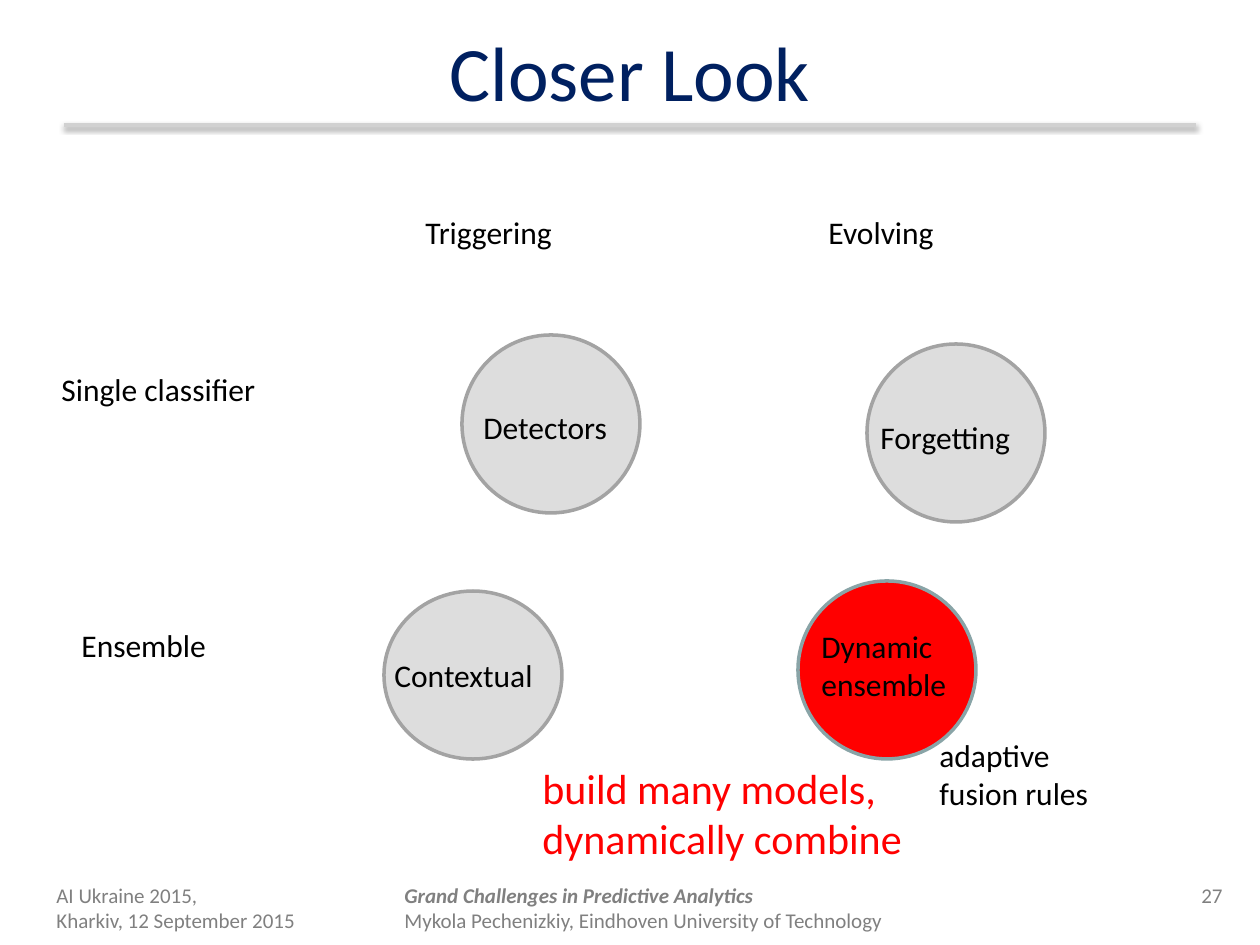
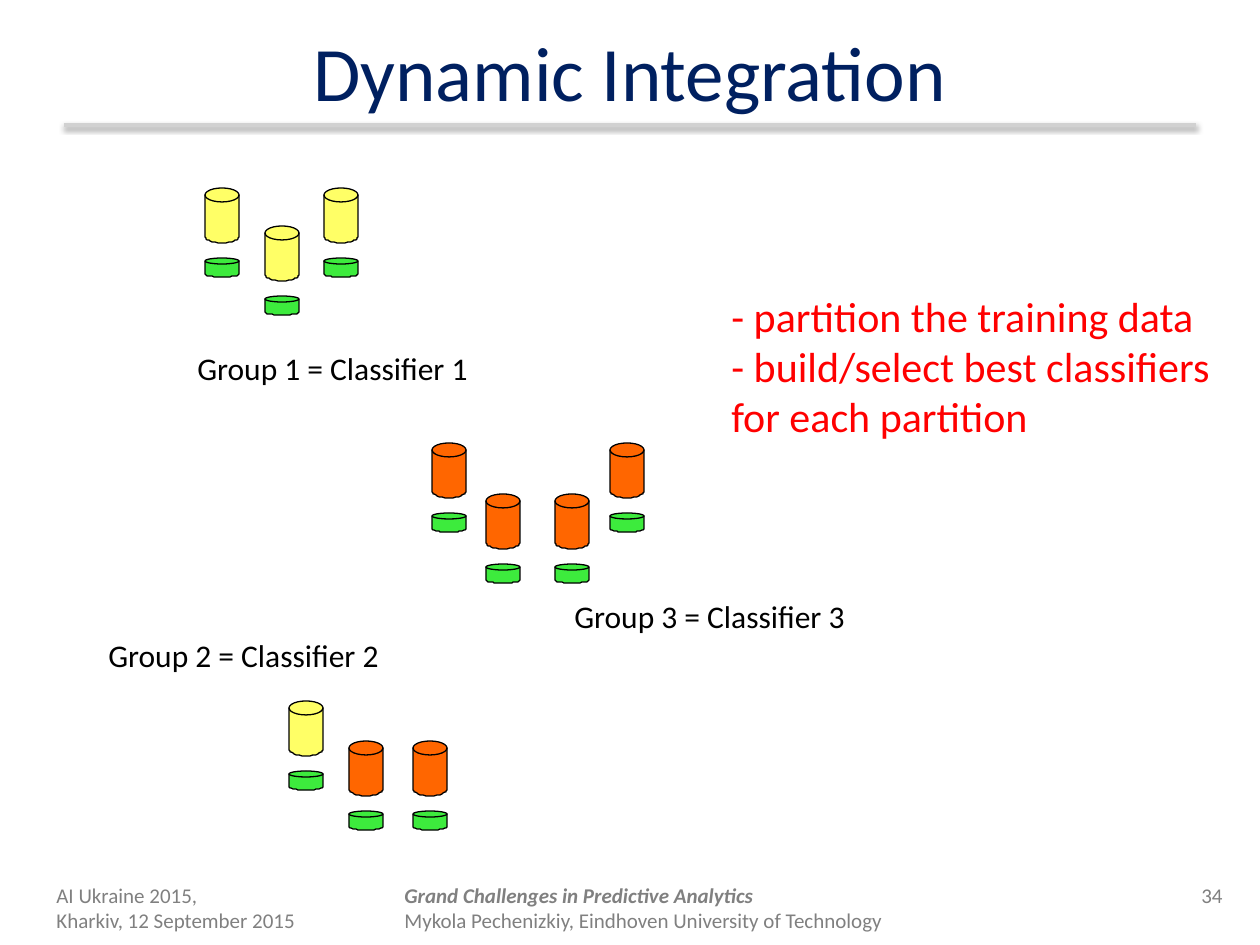
from dataclasses import dataclass
from math import cos, pi, sin

from lxml import etree
from pptx import Presentation
from pptx import util as u
from pptx.dml.color import RGBColor
from pptx.enum import shapes, text
from pptx.oxml import ns

SCALE = u.Inches(1) / 126


@dataclass(frozen=True)
class Theme:
    font: str = "Calibri"
    navy: str = "002060"
    black: str = "000000"
    red: str = "FF0000"
    foot: str = "808080"
    rule: str = "D1D1D1"
    pale: str = "DDDDDD"
    edge: str = "A3A3A3"
    teal: str = "89A4A7"
    yellow: str = "FFFF66"
    orange: str = "FF6600"
    green: str = "3DEB3D"
    head: int = 44
    large: int = 24
    body: int = 18
    small: int = 12


T = Theme()
LEFT, RIGHT = text.PP_ALIGN.LEFT, text.PP_ALIGN.RIGHT
CENTER = text.PP_ALIGN.CENTER
CAN_W, CAN_H, CAN_LID = 34, 55, 14
BASE_H, BASE_LID, BASE_DROP = 19, 6, 70


def px(n):
    return u.Emu(round(n * SCALE))


def rgb(code):
    return RGBColor.from_string(code)


# Text
def add_run(para, words, size, color, strong=False):
    run = para.add_run()
    run.text = words
    font = run.font
    font.name, font.size = T.font, u.Pt(size)
    font.color.rgb = rgb(color)
    font.bold = font.italic = strong


def add_text(slide, box, lines, size=T.body, color=T.black, align=LEFT):
    frame = slide.shapes.add_textbox(*map(px, box)).text_frame
    frame.word_wrap = True
    for i, line in enumerate(lines):
        para = frame.paragraphs[0] if i == 0 else frame.add_paragraph()
        para.alignment = align
        add_run(para, line, size, color)
    return frame


# Shapes
def paint(shape, fill, edge, width):
    shape.shadow.inherit = False
    shape.fill.solid()
    shape.fill.fore_color.rgb = rgb(fill)
    shape.line.color.rgb = rgb(edge)
    shape.line.width = u.Pt(width)


def add_oval(slide, box, fill, edge, width=2):
    oval = slide.shapes.add_shape(shapes.MSO_SHAPE.OVAL, *map(px, box))
    paint(oval, fill, edge, width)


def add_drum(slide, x, y, high, lid, fill):
    """Draw a body with a round foot, then its lid."""
    rx, ry = CAN_W / 2, lid / 2
    arc = [(x + rx + rx * cos(a), y + high - ry + ry * sin(a))
           for a in (pi * k / 24 for k in range(25))]
    form = slide.shapes.build_freeform(x, y + ry, scale=SCALE)
    form.add_line_segments([(x + CAN_W, y + ry), *arc], close=True)
    paint(form.convert_to_shape(), fill, T.black, 0)
    add_oval(slide, (x, y, CAN_W, lid), fill, T.black, 0)


def add_can(slide, x, y, fill):
    add_drum(slide, x, y, CAN_H, CAN_LID, fill)
    add_drum(slide, x, y + BASE_DROP, BASE_H, BASE_LID, T.green)


def add_rule(slide):
    rule = slide.shapes.add_connector(
        shapes.MSO_CONNECTOR.STRAIGHT, *map(px, (64, 125, 1196, 125)))
    rule.line.color.rgb = rgb(T.rule)
    rule.line.width = u.Pt(2)
    props = rule._element.spPr
    effect = etree.SubElement(props, ns.qn("a:effectLst"))
    shade = etree.SubElement(effect, ns.qn("a:outerShdw"), blurRad="40000",
                             dist="20000", dir="5400000", rotWithShape="0")
    color = etree.SubElement(shade, ns.qn("a:srgbClr"), val=T.black)
    etree.SubElement(color, ns.qn("a:alpha"), val="38000")


# Shared frame: rule, title and footer
def add_slide(deck, title, number):
    slide = deck.slides.add_slide(deck.slide_layouts[6])
    add_rule(slide)
    head = add_text(slide, (63, 6, 1134, 129), [title], T.head, T.navy, CENTER)
    head.vertical_anchor = text.MSO_ANCHOR.MIDDLE
    add_text(slide, (44, 876, 282, 50),
             ["AI Ukraine 2015,", "Kharkiv, 12 September 2015"],
             T.small, T.foot)
    add_text(slide, (1153, 876, 82, 50), [number], T.small, T.foot, RIGHT)
    para = add_text(slide, (392, 876, 774, 50), [], T.small).paragraphs[0]
    add_run(para, "Grand Challenges in Predictive Analytics",
            T.small, T.foot, strong=True)
    para.add_line_break()
    add_run(para, "Mykola Pechenizkiy, Eindhoven University of Technology",
            T.small, T.foot)
    return slide


def add_look(deck):
    slide = add_slide(deck, "Closer Look", "27")
    # Column and row heads
    for x, word in ((413, "Triggering"), (816, "Evolving")):
        add_text(slide, (x, 207, 325, 50), [word])
    for x, y, word in ((49, 364, "Single classifier"), (69, 620, "Ensemble")):
        add_text(slide, (x, y, 256, 50), [word])
    # Circles
    for x, y, high in ((462, 335, 178), (867, 344, 178), (384, 591, 168)):
        add_oval(slide, (x, y, 178, high), T.pale, T.edge)
    add_oval(slide, (798, 581, 178, 178), T.red, T.teal)
    # Circle labels
    for x, y, wide, word in ((471, 402, 186, "Detectors"),
                             (868, 412, 186, "Forgetting"),
                             (382, 650, 189, "Contextual"),
                             (809, 621, 158, "Dynamic ensemble")):
        add_text(slide, (x, y, wide, 50), [word])
    # Remarks
    add_text(slide, (530, 756, 541, 113),
             ["build many models,", "dynamically combine"], T.large, T.red)
    add_text(slide, (927, 730, 333, 88), ["adaptive", "fusion rules"])


def add_groups(deck):
    slide = add_slide(deck, "Dynamic Integration", "34")
    # Each group: label place, then its cans
    groups = (
        ((185, 343), ((205, 188, T.yellow), (265, 226, T.yellow),
                      (324, 188, T.yellow))),
        ((96, 630), ((289, 701, T.yellow), (349, 741, T.orange),
                     (413, 741, T.orange))),
        ((562, 591), ((432, 443, T.orange), (486, 494, T.orange),
                      (555, 494, T.orange), (610, 443, T.orange))),
    )
    for n, (place, cans) in enumerate(groups, 1):
        for can in cans:
            add_can(slide, *can)
        add_text(slide, (*place, 365, 50), [f"Group {n} = Classifier {n}"])
    # Remarks
    add_text(slide, (719, 284, 541, 165),
             ["- partition the training data",
              "- build/select best classifiers for each partition"],
             T.large, T.red)


def main():
    deck = Presentation()
    deck.slide_width, deck.slide_height = u.Inches(10), u.Inches(7.5)
    add_look(deck)
    add_groups(deck)
    deck.save("out.pptx")


if __name__ == "__main__":
    main()
